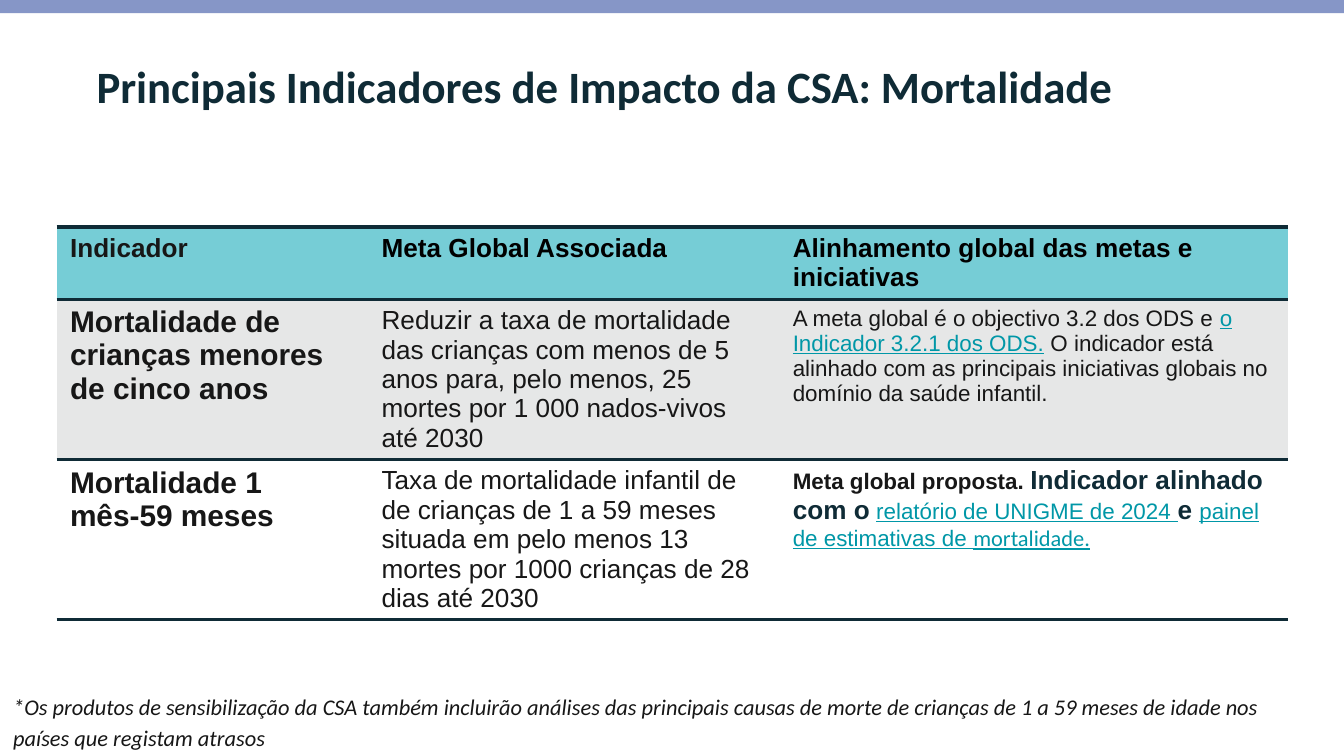
from lxml import etree
from pptx import Presentation
from pptx.dml.color import RGBColor
from pptx.enum import shapes, text
from pptx.oxml.ns import qn
from pptx.util import Cm, Pt

NAVY, INK, BLACK, LINK = "0F2B36", "171717", "000000", "0097A7"
AQUA, GREY, WHITE, LILAC = "76CDD6", "E6E7E7", "FFFFFF", "8696C7"
PLAIN_TABLE_STYLE = "{2D5ABB26-0587-4C30-8999-92F81FD0307C}"

# Each run: wording, size, colour, bold, then optionally the font
HEADER = [
    [("Indicador", 14, INK, True)],
    [("Meta Global Associada", 14, BLACK, True)],
    [("Alinhamento global das metas e iniciativas", 14, BLACK, True)],
]
UNDER_FIVE = [
    [("Mortalidade de crianças menores de cinco anos", 16, INK, True)],
    [("Reduzir a taxa de mortalidade das crianças com menos de 5 anos para, "
      "pelo menos, 25 mortes por 1 000 nados-vivos até 2030", 14, INK, False)],
    [("A meta global é o objectivo 3.2 dos ODS e ", 12, INK, False),
     ("o Indicador 3.2.1 dos ODS.", 12, LINK, False),
     (" O indicador está alinhado com as principais iniciativas globais "
      "no domínio da saúde infantil.", 12, INK, False)],
]
ONE_TO_59_MONTHS = [
    [("Mortalidade 1 mês-59 meses", 16, INK, True)],
    [("Taxa de mortalidade infantil de de crianças de 1 a 59 meses situada em "
      "pelo menos 13 mortes por 1000 crianças de 28 dias até 2030", 14, INK, False)],
    [("Meta global proposta. ", 12, INK, True),
     ("Indicador alinhado com o", 14, NAVY, True),
     (" ", 12, INK, False),
     ("relatório de UNIGME de 2024 ", 12, LINK, False),
     ("e ", 14, NAVY, True),
     ("painel de estimativas de ", 12, LINK, False),
     ("mortalidade.", 12, LINK, False, "Calibri")],
]
# Each row: cells, fill, height in cm, ruled edges
INDICATOR_ROWS = [
    (HEADER, AQUA, 1.36, ("lnT", "lnB")),
    (UNDER_FIVE, GREY, 3.03, ("lnT",)),
    (ONE_TO_59_MONTHS, WHITE, 3.03, ("lnB",)),
]


def color(hex_code):
    return RGBColor.from_string(hex_code)


def format_run(run, size, hex_code, bold=False, font="Arial", italic=False):
    run.font.size = Pt(size)
    run.font.name = font
    run.font.bold = bold
    run.font.italic = italic
    run.font.color.rgb = color(hex_code)
    if hex_code == LINK:
        run.font.underline = True


def rule_edge(cell, edge):
    line = etree.SubElement(cell._tc.get_or_add_tcPr(), qn(f"a:{edge}"), w=str(Pt(2)))
    fill = etree.SubElement(line, qn("a:solidFill"))
    etree.SubElement(fill, qn("a:srgbClr"), val=NAVY)


def add_top_band(slide, left, top, width, height):
    band = slide.shapes.add_shape(
        shapes.MSO_SHAPE.RECTANGLE, Cm(left), Cm(top), Cm(width), Cm(height))
    band.shadow.inherit = False
    band.fill.solid()
    band.fill.fore_color.rgb = color(LILAC)
    band.line.fill.background()


def place_title(slide, left, top, width, height):
    title = slide.shapes.title
    title.left, title.top, title.width, title.height = map(Cm, (left, top, width, height))
    frame = title.text_frame
    frame.text = "Principais Indicadores de Impacto da CSA: Mortalidade"
    frame.vertical_anchor = text.MSO_ANCHOR.MIDDLE
    paragraph = frame.paragraphs[0]
    paragraph.alignment = text.PP_ALIGN.LEFT
    format_run(paragraph.runs[0], 24, NAVY, bold=True, font="Calibri")


def add_indicator_table(slide, left, top, width, height):
    table = slide.shapes.add_table(
        len(INDICATOR_ROWS), len(HEADER), Cm(left), Cm(top), Cm(width), Cm(height)).table
    table._tbl.tblPr.find(qn("a:tableStyleId")).text = PLAIN_TABLE_STYLE
    for column, share in zip(table.columns, (0.253, 0.334, 0.413)):
        column.width = Cm(width * share)
    for row, (contents, fill, row_height, edges) in zip(table.rows, INDICATOR_ROWS):
        row.height = Cm(row_height)
        for cell, runs in zip(row.cells, contents):
            for edge in edges:
                rule_edge(cell, edge)
            cell.fill.solid()
            cell.fill.fore_color.rgb = color(fill)
            paragraph = cell.text_frame.paragraphs[0]
            for wording, *style in runs:
                run = paragraph.add_run()
                run.text = wording
                format_run(run, *style)


def add_footnote(slide, left, top, width, height):
    frame = slide.shapes.add_textbox(Cm(left), Cm(top), Cm(width), Cm(height)).text_frame
    frame.word_wrap = True
    frame.auto_size = text.MSO_AUTO_SIZE.SHAPE_TO_FIT_TEXT
    frame.text = ("*Os produtos de sensibilização da CSA também incluirão análises das "
                  "principais causas de morte de crianças de 1 a 59 meses de idade nos "
                  "países que registam atrasos")
    paragraph = frame.paragraphs[0]
    paragraph.line_spacing = 1.15
    format_run(paragraph.runs[0], 12, INK, font="Calibri", italic=True)


def main():
    deck = Presentation()
    deck.slide_width, deck.slide_height = Cm(25.4), Cm(14.29)
    slide = deck.slides.add_slide(deck.slide_layouts.get_by_name("Title Only"))
    add_top_band(slide, 0, 0, 25.4, 0.25)
    place_title(slide, 1.57, 0.81, 22.25, 1.6)
    add_indicator_table(slide, 1.07, 4.29, 23.27, 7.42)
    add_footnote(slide, 0, 12.9, 25.12, 1.45)
    deck.save("out.pptx")


if __name__ == "__main__":
    main()
